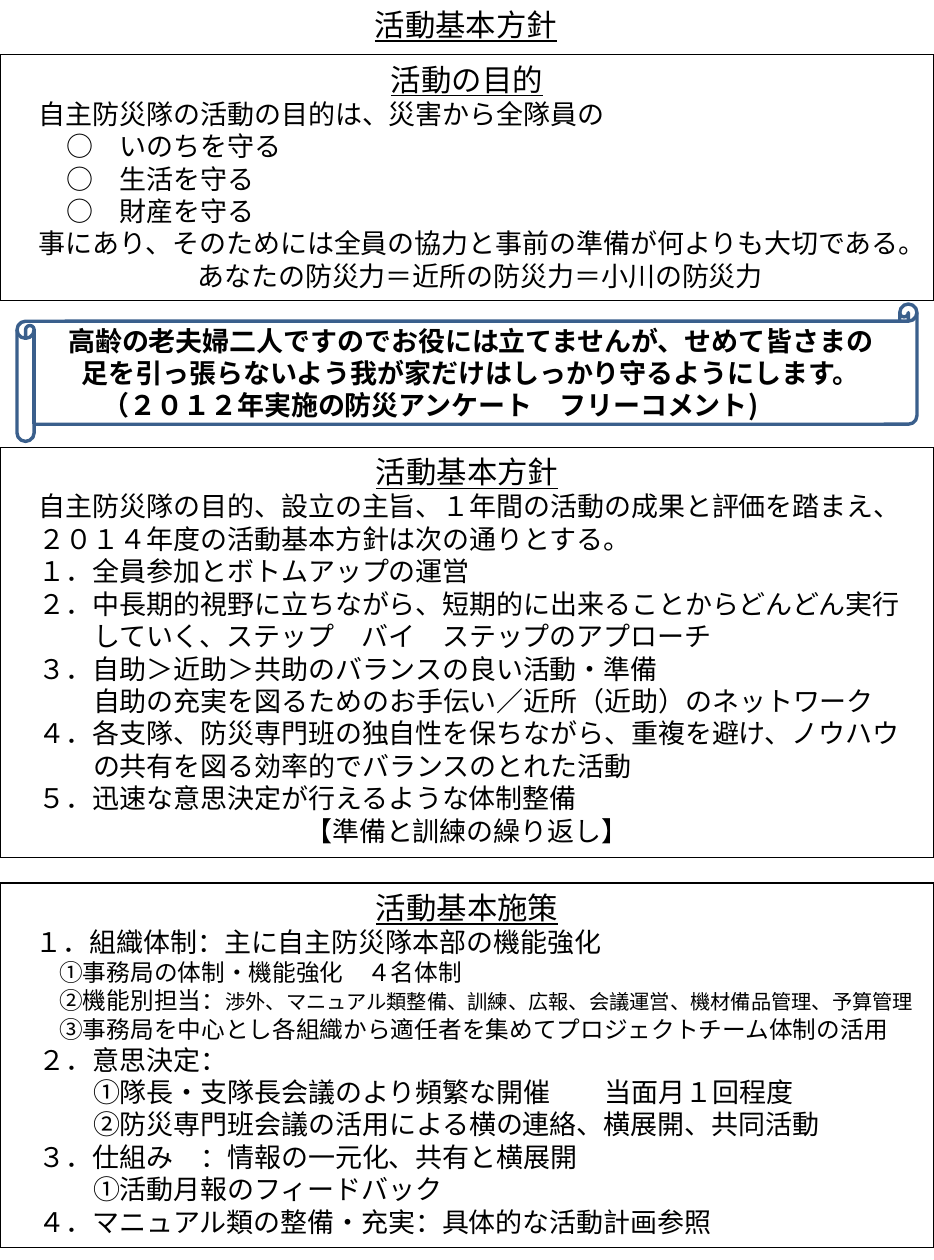
from dataclasses import dataclass

from lxml.etree import SubElement
from pptx import Presentation
from pptx.dml.color import RGBColor
from pptx.enum.shapes import MSO_SHAPE
from pptx.enum.text import MSO_ANCHOR, MSO_AUTO_SIZE, PP_ALIGN
from pptx.oxml.ns import qn
from pptx.util import Inches, Pt

COLORS = {"text": "000000", "border": "000000", "scroll": "3A5F8C"}
JP, SC = "Noto Sans CJK JP", "Noto Sans CJK SC"
WIDTH, HEIGHT = 7.68, 10.36


@dataclass(frozen=True)
class Span:
    text: str
    size: float = 16
    spacing: float = 0


@dataclass(frozen=True)
class Line:
    spans: tuple[Span, ...]
    left: float = 0
    right: float = 0
    centered: bool = False
    underline: bool = False


@dataclass(frozen=True)
class Panel:
    top: float
    height: float
    lines: tuple[Line, ...]


def body(text: str, em: float = 1, size: float = 16) -> Line:
    return Line((Span(text, size),), left=em * size)


def center(text: str, left: float = 0, right: float = 0) -> Line:
    return Line((Span(text),), left, right, centered=True)


def heading(text: str) -> Line:
    return Line((Span(text, 18),), centered=True, underline=True)


PURPOSE = Panel(0.45, 2.02, (
    heading("活動の目的"),
    body("自主防災隊の活動の目的は、災害から全隊員の"),
    body("○　いのちを守る", 2),
    body("○　生活を守る", 2),
    body("○　財産を守る", 2),
    body("事にあり、そのためには全員の協力と事前の準備が何よりも大切である。"),
    center("あなたの防災力＝近所の防災力＝小川の防災力", left=16),
))
POLICY = Panel(3.68, 3.37, (
    heading("活動基本方針"),
    body("自主防災隊の目的、設立の主旨、１年間の活動の成果と評価を踏まえ、"),
    body("２０１４年度の活動基本方針は次の通りとする。"),
    body("１．全員参加とボトムアップの運営"),
    body("２．中長期的視野に立ちながら、短期的に出来ることからどんどん実行"),
    body("していく、ステップ　バイ　ステップのアプローチ", 3),
    body("３．自助＞近助＞共助のバランスの良い活動・準備"),
    body("自助の充実を図るためのお手伝い／近所（近助）のネットワーク", 3),
    body("４．各支隊、防災専門班の独自性を保ちながら、重複を避け、ノウハウ"),
    body("の共有を図る効率的でバランスのとれた活動", 3),
    body("５．迅速な意思決定が行えるような体制整備"),
    center("【準備と訓練の繰り返し】"),
))
MEASURES = Panel(7.26, 3, (
    heading("活動基本施策"),
    Line((Span("１．組織体制：主に自主防災隊本部の機能強化"),), left=14),
    body("①事務局の体制・機能強化　４名体制", 2, 14),
    Line((Span("②機能別担当：", 14),
          Span("渉外、マニュアル類整備、訓練、広報、会議運営、機材備品管理、予算管理", 12)),
         left=28),
    body("③事務局を中心とし各組織から適任者を集めてプロジェクトチーム体制の活用", 2, 14),
    body("２．意思決定："),
    Line((Span("①隊長・支隊長会議のより頻繁な開催"), Span("　", spacing=16),
          Span("当面月１回程度")), left=48),
    body("②防災専門班会議の活用による横の連絡、横展開、共同活動", 3),
    body("３．仕組み　：情報の一元化、共有と横展開"),
    body("①活動月報のフィードバック", 3),
    body("４．マニュアル類の整備・充実：具体的な活動計画参照"),
))
COMMENT = (
    center("高齢の老夫婦二人ですのでお役には立てませんが、せめて皆さまの"),
    center("足を引っ張らないよう我が家だけはしっかり守るようにします。"),
    center("（２０１２年実施の防災アンケート　フリーコメント)", right=48),
)


def write(tf, lines: tuple[Line, ...], font: str, bold: bool = False) -> None:
    for i, line in enumerate(lines):
        p = tf.add_paragraph() if i else tf.paragraphs[0]
        p.alignment = PP_ALIGN.CENTER if line.centered else PP_ALIGN.LEFT
        pPr = p._p.get_or_add_pPr()
        pPr.set("marL", str(Pt(line.left)))
        pPr.set("marR", str(Pt(line.right)))
        for span in line.spans:
            r = p.add_run()
            r.text = span.text
            r.font.size = Pt(span.size)
            r.font.bold = bold
            r.font.underline = line.underline
            r.font.name = font
            r.font.color.rgb = RGBColor.from_string(COLORS["text"])
            rPr = r._r.get_or_add_rPr()
            SubElement(rPr, qn("a:ea")).set("typeface", font)
            if span.spacing:
                rPr.set("spc", str(int(span.spacing * 100)))


def add_outline(s, kind: MSO_SHAPE, box: tuple[float, ...], color: str, width: float):
    sp = s.shapes.add_shape(kind, *map(Inches, box))
    sp.shadow.inherit = False
    sp.fill.background()
    sp.line.color.rgb = RGBColor.from_string(COLORS[color])
    sp.line.width = Pt(width)
    sp.text_frame.word_wrap = True
    return sp


def add_panel(s, panel: Panel) -> None:
    sp = add_outline(s, MSO_SHAPE.RECTANGLE, (0, panel.top, WIDTH, panel.height), "border", 0.75)
    tf = sp.text_frame
    tf.vertical_anchor = MSO_ANCHOR.TOP
    tf.auto_size = MSO_AUTO_SIZE.SHAPE_TO_FIT_TEXT
    write(tf, panel.lines, JP)


def main() -> None:
    """Build the disaster-prevention policy slide."""
    prs = Presentation()
    prs.slide_width, prs.slide_height = Inches(WIDTH), Inches(HEIGHT)
    s = prs.slides.add_slide(prs.slide_layouts[6])

    title = s.shapes.add_textbox(Inches(2.97), Inches(0), Inches(1.72), Inches(0.4))
    title.text_frame.word_wrap = False
    title.text_frame.auto_size = MSO_AUTO_SIZE.SHAPE_TO_FIT_TEXT
    write(title.text_frame, (heading("活動基本方針"),), SC)

    for panel in (PURPOSE, POLICY, MEASURES):
        add_panel(s, panel)

    scroll = add_outline(s, MSO_SHAPE.HORIZONTAL_SCROLL, (0.14, 2.5, 7.4, 1.13), "scroll", 2)
    scroll.text_frame.vertical_anchor = MSO_ANCHOR.MIDDLE
    write(scroll.text_frame, COMMENT, SC, bold=True)

    prs.save("out.pptx")


if __name__ == "__main__":
    main()
